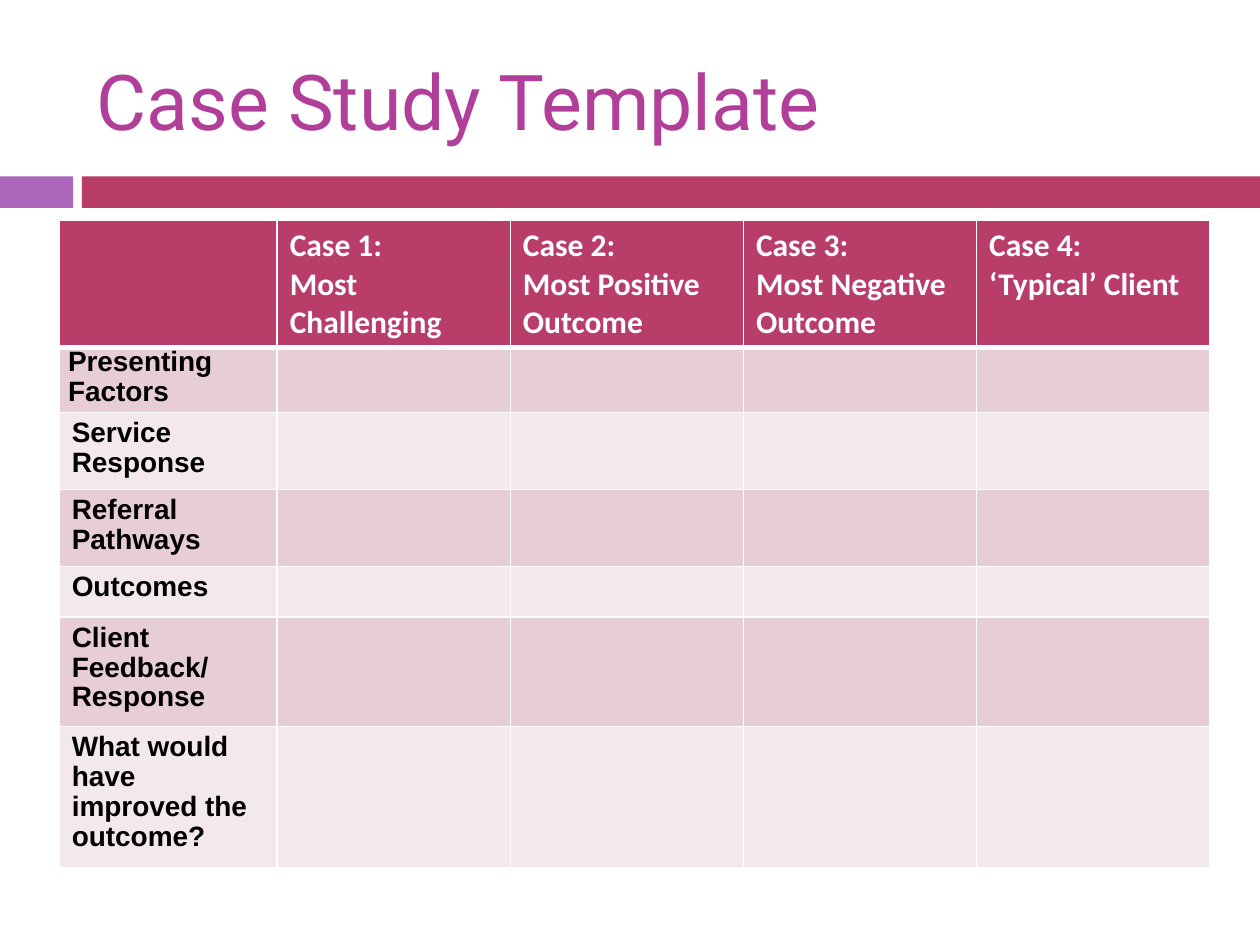
from lxml import etree
from pptx import Presentation
from pptx.dml.color import RGBColor as Color
from pptx.enum.shapes import MSO_SHAPE as Shape
from pptx.enum.text import MSO_ANCHOR as Anchor
from pptx.oxml.ns import qn
from pptx.util import Inches, Pt

ROSE = Color(0xB8, 0x3D, 0x68)
VIOLET = Color(0xAC, 0x66, 0xBB)
PURPLE = Color(0xB1, 0x3F, 0x9A)
PINK = Color(0xE6, 0xCE, 0xD4)
PALE = Color(0xF3, 0xE8, 0xEB)
WHITE = Color(0xFF, 0xFF, 0xFF)
BLACK = Color(0, 0, 0)

HEADS = [
    "",
    "Case 1:\nMost Challenging",
    "Case 2:\nMost Positive Outcome",
    "Case 3:\nMost Negative Outcome",
    "Case 4:\n‘Typical’ Client",
]
LABELS = [
    "Presenting\nFactors",
    "Service\nResponse",
    "Referral Pathways",
    "Outcomes",
    "Client Feedback/\nResponse",
    "What would have improved the outcome?",
]
WIDTHS = [1.73] + [1.85] * 4
HEIGHTS = [1.01, 0.49, 0.6, 0.6, 0.4, 0.84, 1.09]


def write(frame, text, font, size, color, bold=False, space=None):
    """Fill a text frame, one paragraph per line of text."""
    frame.word_wrap = True
    for i, line in enumerate(text.split("\n")):
        para = frame.add_paragraph() if i else frame.paragraphs[0]
        para.line_spacing = space
        run = para.add_run()
        run.text = line
        run.font.name = font
        run.font.size = Pt(size)
        run.font.bold = bold
        run.font.color.rgb = color


def add_bar(slide, left, width, color):
    bar = slide.shapes.add_shape(
        Shape.RECTANGLE, Inches(left), Inches(1.4), Inches(width), Inches(0.25))
    bar.shadow.inherit = False
    bar.fill.solid()
    bar.fill.fore_color.rgb = color
    bar.line.fill.background()


def add_title(slide, text):
    box = slide.shapes.add_textbox(
        Inches(0.67), Inches(0.25), Inches(8.92), Inches(1.08))
    box.text_frame.vertical_anchor = Anchor.MIDDLE
    write(box.text_frame, text, font="Roboto", size=44, color=PURPLE)


def set_edges(cell, top=1, bottom=1):
    """Give a cell white borders, with widths in points."""
    props = cell._tc.get_or_add_tcPr()
    edges = {"lnL": 1, "lnR": 1, "lnT": top, "lnB": bottom}
    for i, (tag, width) in enumerate(edges.items()):
        line = etree.Element(qn("a:" + tag), w=str(Pt(width)))
        fill = etree.SubElement(line, qn("a:solidFill"))
        etree.SubElement(fill, qn("a:srgbClr"), val=str(WHITE))
        props.insert(i, line)


def add_grid(slide):
    table = slide.shapes.add_table(
        len(HEIGHTS), len(WIDTHS), Inches(0.47), Inches(1.75),
        Inches(sum(WIDTHS)), Inches(sum(HEIGHTS))).table
    for col, width in zip(table.columns, WIDTHS):
        col.width = Inches(width)
    for row, height in zip(table.rows, HEIGHTS):
        row.height = Inches(height)

    # Header band, then alternating body bands
    for r, row in enumerate(table.rows):
        shade = ROSE if r == 0 else PINK if r % 2 else PALE
        for cell in row.cells:
            cell.fill.solid()
            cell.fill.fore_color.rgb = shade
            set_edges(cell, top=3 if r == 1 else 1, bottom=3 if r == 0 else 1)

    # Column heads and row labels
    for c, head in enumerate(HEADS):
        if head:
            write(table.cell(0, c).text_frame, head, font="Calibri", size=18,
                  color=WHITE, bold=True)
    for r, label in enumerate(LABELS, 1):
        write(table.cell(r, 0).text_frame, label, font="Arial", size=16,
              color=BLACK, bold=True, space=0.96)

    # The first label sits tight in its row
    for cell in table.rows[1].cells:
        cell.margin_left = cell.margin_right = Inches(0.07)
        cell.margin_top = cell.margin_bottom = 0


def main():
    deck = Presentation()
    deck.slide_width, deck.slide_height = Inches(10), Inches(7.5)
    slide = deck.slides.add_slide(deck.slide_layouts[6])
    add_bar(slide, left=0, width=0.58, color=VIOLET)
    add_bar(slide, left=0.65, width=9.35, color=ROSE)
    add_title(slide, "Case Study Template")
    add_grid(slide)
    deck.save("out.pptx")


if __name__ == "__main__":
    main()
